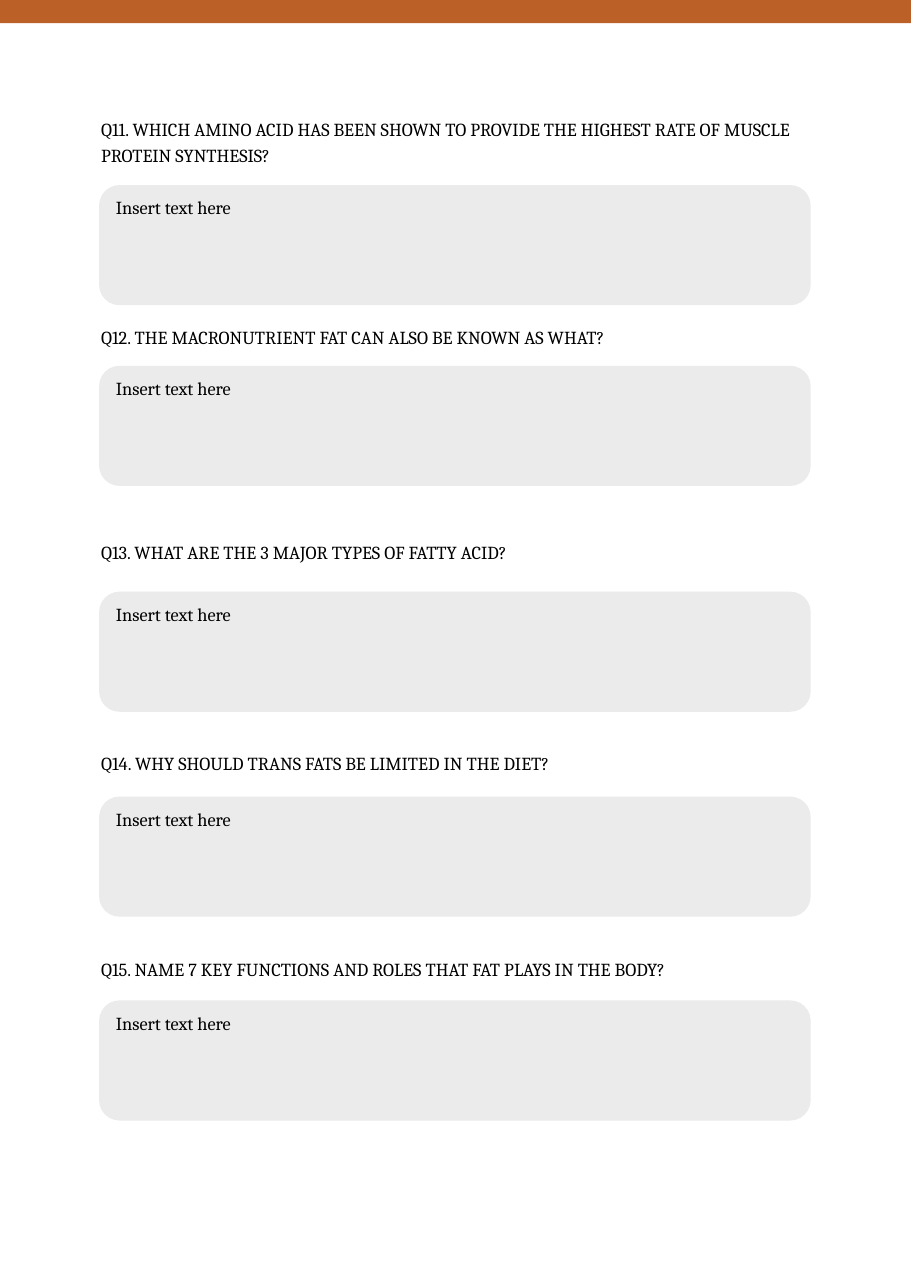
from dataclasses import dataclass

from pptx import Presentation
from pptx.dml.color import RGBColor
from pptx.enum.shapes import MSO_SHAPE as SHAPE
from pptx.enum.text import MSO_ANCHOR as ANCHOR, PP_ALIGN as ALIGN
from pptx.util import Inches, Pt


@dataclass(frozen=True)
class Theme:
    band: RGBColor = RGBColor(0xBB, 0x61, 0x28)
    answer: RGBColor = RGBColor(0xEB, 0xEB, 0xEB)
    ink: RGBColor = RGBColor(0x00, 0x00, 0x00)
    font: str = "Cambria"
    size: int = 12


theme = Theme()


def write(sp, text, size=theme.size, color=theme.ink, spacing=1.0):
    tf = sp.text_frame
    tf.word_wrap = True
    tf.vertical_anchor = ANCHOR.TOP
    p = tf.paragraphs[0]
    p.alignment = ALIGN.LEFT
    p.line_spacing = spacing
    r = p.add_run()
    r.text = text
    r.font.name = theme.font
    r.font.size = Pt(size)
    r.font.color.rgb = color


def add_block(kind, left, top, width, height, fill):
    sp = slide.shapes.add_shape(kind, Inches(left), Inches(top), Inches(width), Inches(height))
    sp.shadow.inherit = False
    sp.fill.solid()
    sp.fill.fore_color.rgb = fill
    sp.line.fill.background()
    return sp


prs = Presentation()
prs.slide_width = Inches(8.27)
prs.slide_height = Inches(11.69)
slide = prs.slides.add_slide(prs.slide_layouts[6])

add_block(SHAPE.RECTANGLE, 0, 0, 8.27, 0.21, theme.band)

question_left, answer_left = 0.82, 0.9
column_width, answer_height = 6.46, 1.09
first_number = 11
questions = [
    ("WHICH AMINO ACID HAS BEEN SHOWN TO PROVIDE THE HIGHEST RATE OF MUSCLE PROTEIN SYNTHESIS?", 0.98, 0.59, 1.68),
    ("THE MACRONUTRIENT FAT CAN ALSO BE KNOWN AS WHAT?", 2.87, 0.34, 3.32),
    ("WHAT ARE THE 3 MAJOR TYPES OF FATTY ACID?", 4.82, 0.34, 5.37),
    ("WHY SHOULD TRANS FATS BE LIMITED IN THE DIET?", 6.74, 0.34, 7.23),
    ("NAME 7 KEY FUNCTIONS AND ROLES THAT FAT PLAYS IN THE BODY?", 8.61, 0.34, 9.08),
]

for number, (question, top, height, answer_top) in enumerate(questions, first_number):
    box = slide.shapes.add_textbox(Inches(question_left), Inches(top), Inches(column_width), Inches(height))
    write(box, f"Q{number}. {question}", spacing=1.2)

    answer = add_block(SHAPE.ROUNDED_RECTANGLE, answer_left, answer_top, column_width, answer_height, theme.answer)
    answer.adjustments[0] = 0.17
    write(answer, "Insert text here")

prs.save("out.pptx")
